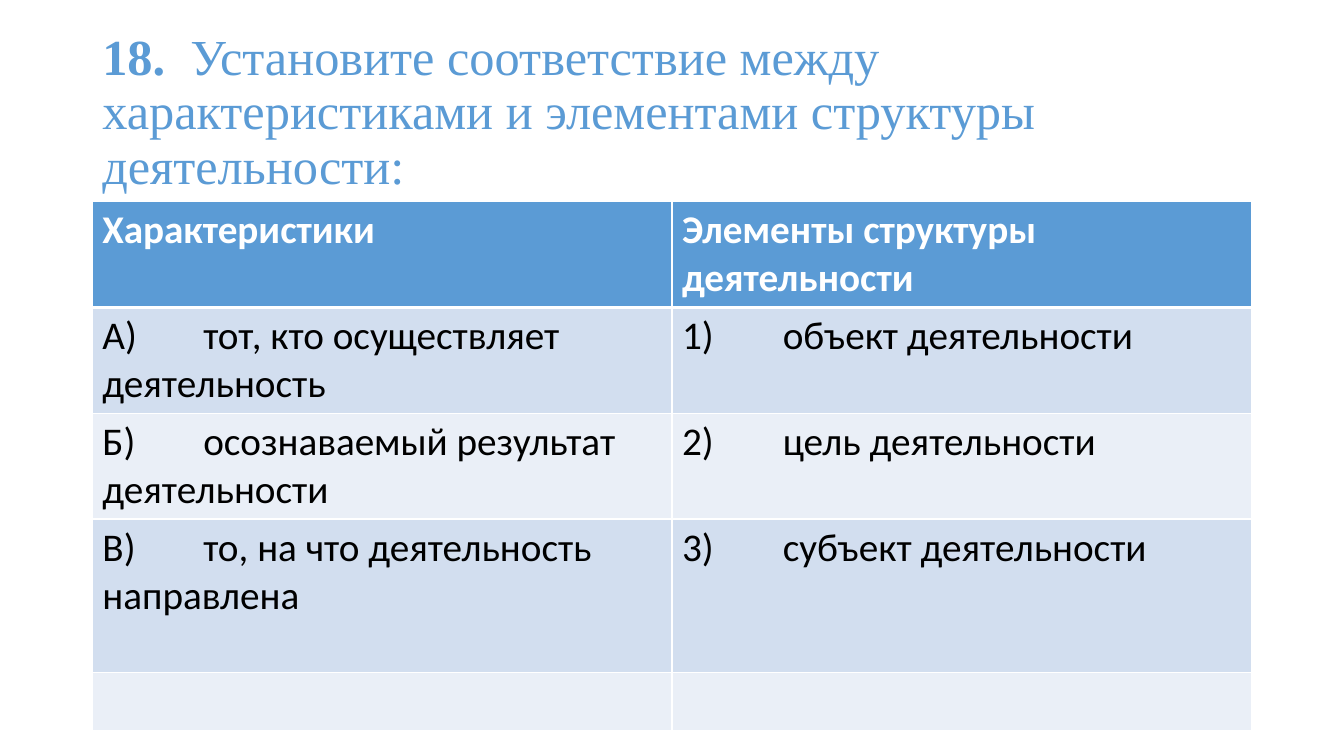
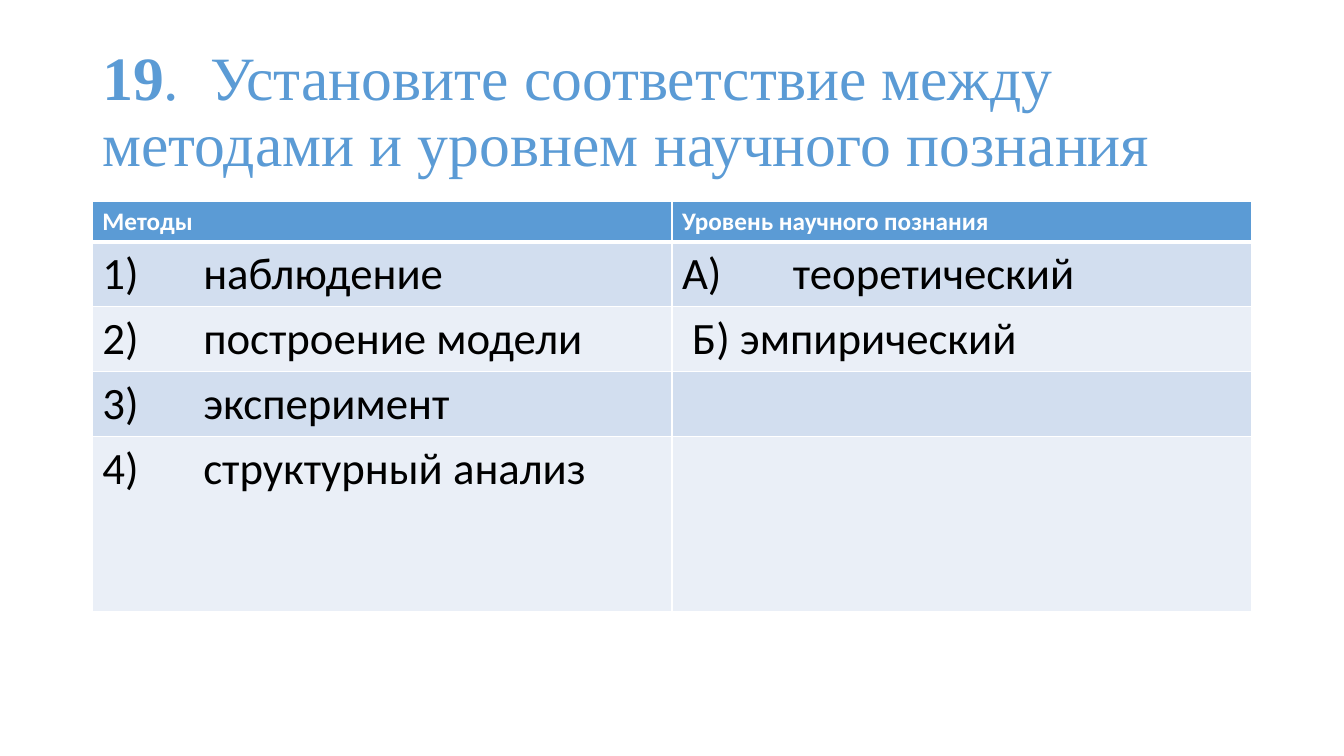
from dataclasses import dataclass

from lxml import etree
from pptx import Presentation
from pptx.dml.color import RGBColor
from pptx.enum.text import MSO_ANCHOR
from pptx.oxml.ns import qn
from pptx.util import Pt

MIDDLE = MSO_ANCHOR.MIDDLE


@dataclass(frozen=True)
class Theme:
    blue: str = "5B9BD5"
    odd: str = "D2DEEF"
    even: str = "EAEFF7"
    white: str = "FFFFFF"
    black: str = "000000"
    serif: str = "Times New Roman"
    sans: str = "Calibri"
    thin: float = 1
    thick: float = 3
    tab: float = 72


THEME = Theme()
LEFT, WIDTH = 66, 828
TITLE_TOP, TITLE_HIGH, TABLE_TOP = 28.75, 104.4, 144

SLIDES = [
    {
        "title": ("18.", "  Установите соответствие между характеристиками и элементами структуры деятельности:"),
        "title_size": 36,
        "head_size": 28,
        "body_size": 28,
        "heights": [75.6, 75.6, 75.6, 109.5, 41.5],
        "rows": [
            ("Характеристики", "Элементы структуры деятельности"),
            ("А) \tтот, кто осуществляет деятельность", "1) \tобъект деятельности"),
            ("Б) \tосознаваемый результат деятельности", "2) \tцель деятельности"),
            ("В) \tто, на что деятельность направлена", "3) \tсубъект деятельности"),
            ("", ""),
        ],
    },
    {
        "title": ("19", ".  Установите соответствие между методами и уровнем научного познания"),
        "title_size": 44,
        "head_size": 18,
        "body_size": 32,
        "heights": [28.8, 46.4, 46.4, 46.4, 125],
        "rows": [
            ("Методы", "Уровень научного познания"),
            ("1)\tнаблюдение", "А)\t теоретический"),
            ("2)\tпостроение модели", " Б) эмпирический"),
            ("3)\tэксперимент", ""),
            ("4)\tструктурный анализ", ""),
        ],
    },
]


def style(font, face, size, color, bold=False):
    font.name, font.size, font.bold = face, Pt(size), bold
    font.color.rgb = RGBColor.from_string(color)


def add_title(slide, parts, size):
    box = slide.shapes.add_textbox(Pt(LEFT), Pt(TITLE_TOP), Pt(WIDTH), Pt(TITLE_HIGH))
    frame = box.text_frame
    frame.word_wrap = True
    frame.vertical_anchor = MIDDLE
    para = frame.paragraphs[0]
    para.line_spacing = 0.9
    for part, bold in zip(parts, (True, False)):
        run = para.add_run()
        run.text = part
        style(run.font, THEME.serif, size, THEME.blue, bold)


def add_edges(cell, row):
    props = cell._tc.get_or_add_tcPr()
    top = THEME.thick if row == 1 else THEME.thin
    base = THEME.thick if row == 0 else THEME.thin
    for tag, width in (("lnL", THEME.thin), ("lnR", THEME.thin), ("lnT", top), ("lnB", base)):
        line = etree.SubElement(props, qn(f"a:{tag}"), w=str(Pt(width)))
        fill = etree.SubElement(line, qn("a:solidFill"))
        etree.SubElement(fill, qn("a:srgbClr"), val=THEME.white)


def add_tab(para):
    stops = etree.SubElement(para._p.get_or_add_pPr(), qn("a:tabLst"))
    etree.SubElement(stops, qn("a:tab"), pos=str(Pt(THEME.tab)), algn="l")


def fill_cell(cell, text, row, data):
    head = row == 0
    add_edges(cell, row)
    color = THEME.blue if head else THEME.odd if row % 2 else THEME.even
    cell.fill.solid()
    cell.fill.fore_color.rgb = RGBColor.from_string(color)
    if text:
        cell.text = text
        para = cell.text_frame.paragraphs[0]
        if "\t" in text:
            add_tab(para)
        size = data["head_size"] if head else data["body_size"]
        ink = THEME.white if head else THEME.black
        style(para.font, THEME.sans, size, ink, head)


def add_grid(slide, data):
    rows, heights = data["rows"], data["heights"]
    count = len(rows[0])
    table = slide.shapes.add_table(
        len(rows), count, Pt(LEFT), Pt(TABLE_TOP), Pt(WIDTH), Pt(sum(heights))
    ).table
    for row, (texts, high) in enumerate(zip(rows, heights)):
        table.rows[row].height = Pt(high)
        for col, text in enumerate(texts):
            fill_cell(table.cell(row, col), text, row, data)


def main():
    deck = Presentation()
    deck.slide_width, deck.slide_height = Pt(960), Pt(540)
    for data in SLIDES:
        slide = deck.slides.add_slide(deck.slide_layouts[6])
        add_title(slide, data["title"], data["title_size"])
        add_grid(slide, data)
    deck.save("out.pptx")


if __name__ == "__main__":
    main()
